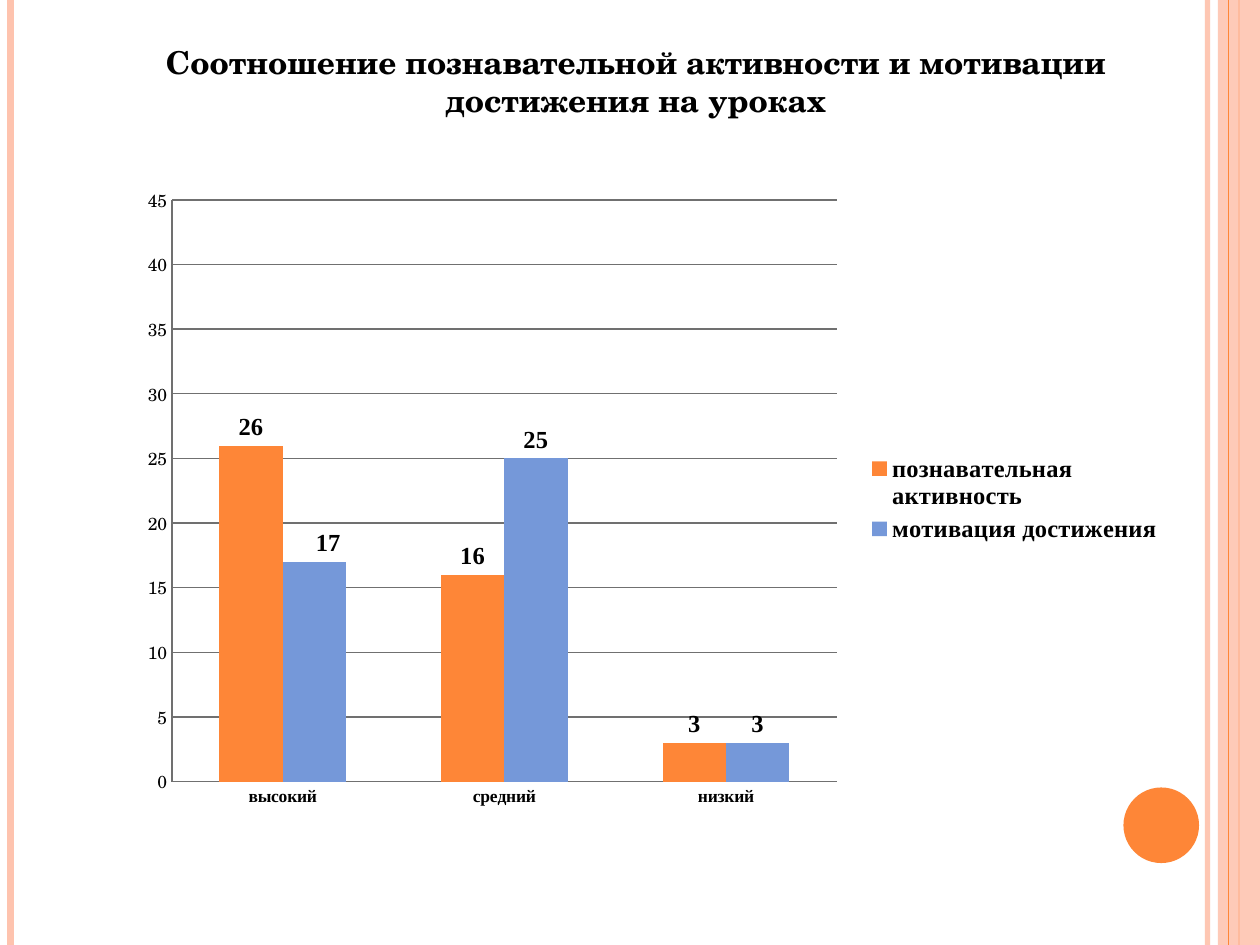
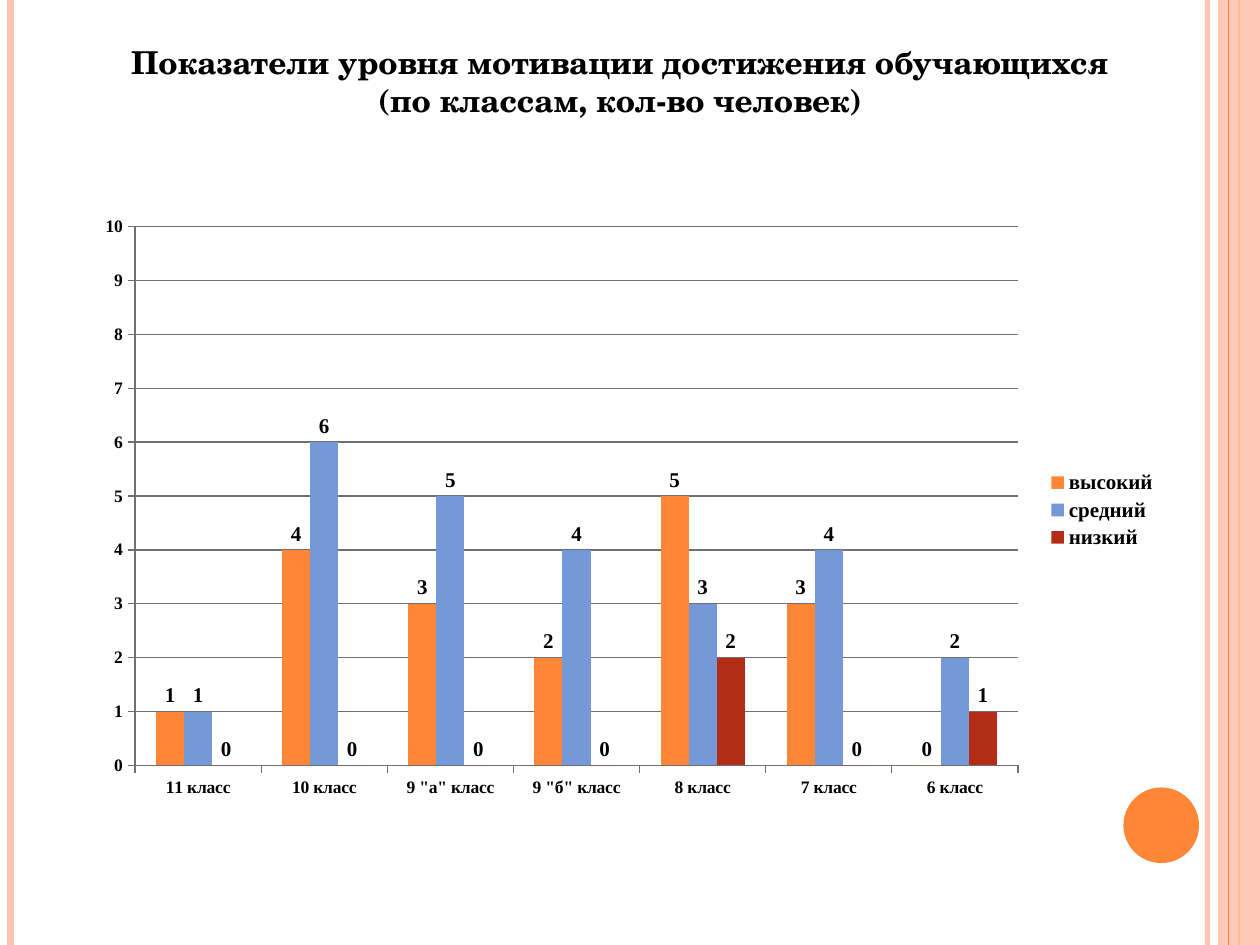
from lxml import etree
from pptx import Presentation
from pptx import util as u
from pptx.chart.data import CategoryChartData
from pptx.dml.color import RGBColor
from pptx.enum import chart as ch, shapes, text
from pptx.oxml import parse_xml
from pptx.oxml.ns import nsdecls, qn

Pt = u.Pt
ORANGE = RGBColor(0xFE, 0x86, 0x37)
PEACH = RGBColor(0xFE, 0xC3, 0xAE)
BLUE = RGBColor(0x75, 0x98, 0xD9)
RED = RGBColor(0xB3, 0x2C, 0x16)
BLACK = RGBColor(0, 0, 0)
GREY = RGBColor(0x70, 0x70, 0x70)
SERIES_COLORS = (ORANGE, BLUE, RED)
W, H = 720, 540
SERIF = "TeX Gyre Schola"
TIMES = "Times New Roman"

RATIO_SLIDE = dict(
    title=["Соотношение познавательной активности и мотивации достижения на уроках"],
    title_box=(60, 21, 607, 51),
    box=(72.75, 100, 595.5, 368.75),
    cats=["высокий", "средний", "низкий"],
    series={"познавательная активность": [26, 16, 3],
            "мотивация достижения": [17, 25, 3]},
    top=45, step=5, tick=ch.XL_TICK_MARK.NONE, label_size=14,
    value_font=dict(name=SERIF, bold=False),
    plot=(25.5, 14.25, 380, 332.5), legend=(419, 157, 176, 56),
    label_shifts=[(1, 0, 8)],
)
CLASSES_SLIDE = dict(
    title=["Показатели уровня мотивации достижения обучающихся",
           "(по классам, кол-во человек)"],
    title_box=(31, 21, 646.5, 51),
    box=(48.25, 116.5, 617.75, 345.75),
    cats=["11 класс", "10 класс", '9 "а" класс', '9 "б" класс',
          "8 класс", "7 класс", "6 класс"],
    series={"высокий": [1, 4, 3, 2, 5, 3, 0],
            "средний": [1, 6, 5, 4, 3, 4, 2],
            "низкий": [0, 0, 0, 0, 2, 0, 1]},
    top=10, step=1, tick=ch.XL_TICK_MARK.OUTSIDE, label_size=12,
    value_font=dict(name=TIMES, bold=True),
    plot=(29, 13, 504.5, 308), legend=(546, 150, 71, 50),
    label_shifts=[],
)


def set_font(font, **formats):
    font.color.rgb = BLACK
    for name, value in formats.items():
        setattr(font, name, value)


def set_alpha(sp, percent):
    for color in sp._element.spPr.iter(qn("a:srgbClr")):
        etree.SubElement(color, qn("a:alpha"), val=str(percent * 1000))


def add_rule(slide, x, width, color):
    """Draw a vertical line over the full slide height."""
    line = slide.shapes.add_connector(
        shapes.MSO_CONNECTOR.STRAIGHT, Pt(x), 0, Pt(x), Pt(H))
    line.line.color.rgb = color
    line.line.width = Pt(width)
    etree.SubElement(line._element.spPr, qn("a:effectLst"))
    return line


def add_filled(slide, kind, box, color):
    sp = slide.shapes.add_shape(kind, *map(Pt, box))
    sp.shadow.inherit = False
    sp.fill.solid()
    sp.fill.fore_color.rgb = color
    sp.line.fill.background()
    return sp


def add_frame(slide):
    """Draw the side rules, right band and circle shared by the slides."""
    set_alpha(add_rule(slide, W - 30, 3, PEACH), 93)
    add_rule(slide, 6, 4.5, PEACH)
    add_rule(slide, W - 12, 1.5, ORANGE)
    band = add_filled(slide, shapes.MSO_SHAPE.RECTANGLE, (W - 24, 0, 24, H), PEACH)
    set_alpha(band, 87)
    add_rule(slide, W - 18, 0.75, ORANGE)
    add_filled(slide, shapes.MSO_SHAPE.OVAL, (642, 450, 43.2, 43.2), ORANGE)


def add_title(slide, box, lines):
    tf = slide.shapes.add_textbox(*map(Pt, box)).text_frame
    tf.word_wrap = True
    for i, line in enumerate(lines):
        p = tf.paragraphs[0] if i == 0 else tf.add_paragraph()
        p.alignment = text.PP_ALIGN.CENTER
        r = p.add_run()
        r.text = line
        set_font(r.font, name=SERIF, size=Pt(18), bold=True)


def layout_xml(target="", modes=True, **fractions):
    parts = [f'<c:layoutTarget val="{target}"/>'] if target else []
    if modes:
        parts += [f'<c:{axis}Mode val="edge"/>' for axis in "xy"]
    parts += [f'<c:{name} val="{value:.4f}"/>' for name, value in fractions.items()]
    return parse_xml(f'<c:layout {nsdecls("c")}><c:manualLayout>{"".join(parts)}'
                     '</c:manualLayout></c:layout>')


def place_part(part, after, box, chart_box, target=""):
    """Fix a chart part at box, in points from the chart's corner."""
    for old in part.findall(qn("c:layout")):
        part.remove(old)
    width, height = chart_box[2:]
    x, y, w, h = box
    layout = layout_xml(target, x=x / width, y=y / height, w=w / width, h=h / height)
    if after is None:
        part.insert(0, layout)
    else:
        part.find(qn(after)).addnext(layout)


def style_axes(chart, top, step, tick, value_font):
    cat, val = chart.category_axis, chart.value_axis
    for axis in (cat, val):
        axis.major_tick_mark = tick
        axis.minor_tick_mark = ch.XL_TICK_MARK.NONE
        axis.format.line.color.rgb = GREY
        axis.format.line.width = Pt(0.75)
    set_font(cat.tick_labels.font, name=TIMES, size=Pt(10), bold=True)
    set_font(val.tick_labels.font, size=Pt(10), **value_font)
    limits = dict(minimum_scale=0, maximum_scale=top, major_unit=step,
                  has_major_gridlines=True)
    for name, value in limits.items():
        setattr(val, name, value)
    val.major_gridlines.format.line.color.rgb = GREY
    val.major_gridlines.format.line.width = Pt(0.75)


def add_column_chart(slide, box, cats, series, top, step, tick, label_size,
                     value_font, plot, legend, label_shifts):
    data = CategoryChartData()
    data.categories = cats
    for name, values in series.items():
        data.add_series(name, values)
    chart = slide.shapes.add_chart(
        ch.XL_CHART_TYPE.COLUMN_CLUSTERED, *map(Pt, box), data).chart
    set_font(chart.font, name=SERIF, size=Pt(10))
    chart.has_title = False
    style_axes(chart, top, step, tick, value_font)

    label_font = dict(name=TIMES, size=Pt(label_size), bold=True)
    columns = chart.plots[0]
    columns.gap_width, columns.overlap = 150, 0
    columns.vary_by_categories = False
    for ser, color in zip(columns.series, SERIES_COLORS):
        ser.format.fill.solid()
        ser.format.fill.fore_color.rgb = color
        ser.data_labels.show_value = True
        ser.data_labels.position = ch.XL_LABEL_POSITION.OUTSIDE_END
        set_font(ser.data_labels.font, **label_font)
    for ser_no, point_no, shift in label_shifts:
        ser = columns.series[ser_no]
        label = ser.points[point_no].data_label
        set_font(label.font, **label_font)
        label.position = ch.XL_LABEL_POSITION.OUTSIDE_END
        idx = ser.data_labels._element.find(qn("c:dLbl")).find(qn("c:idx"))
        idx.addnext(layout_xml(modes=False, x=shift / box[2], y=0))

    chart.has_legend = True
    chart.legend.position = ch.XL_LEGEND_POSITION.RIGHT
    chart.legend.include_in_layout = False
    set_font(chart.legend.font, **label_font)
    place_part(chart.legend._element, "c:legendPos", legend, box)
    place_part(chart._chartSpace.chart.plotArea, None, plot, box, "inner")


def add_chart_slide(prs, title, title_box, **chart_args):
    slide = prs.slides.add_slide(prs.slide_layouts[6])
    add_frame(slide)
    add_title(slide, title_box, title)
    add_column_chart(slide, **chart_args)


def main():
    prs = Presentation()
    prs.slide_width, prs.slide_height = Pt(W), Pt(H)
    for content in (RATIO_SLIDE, CLASSES_SLIDE):
        add_chart_slide(prs, **content)
    prs.save("out.pptx")


if __name__ == "__main__":
    main()
